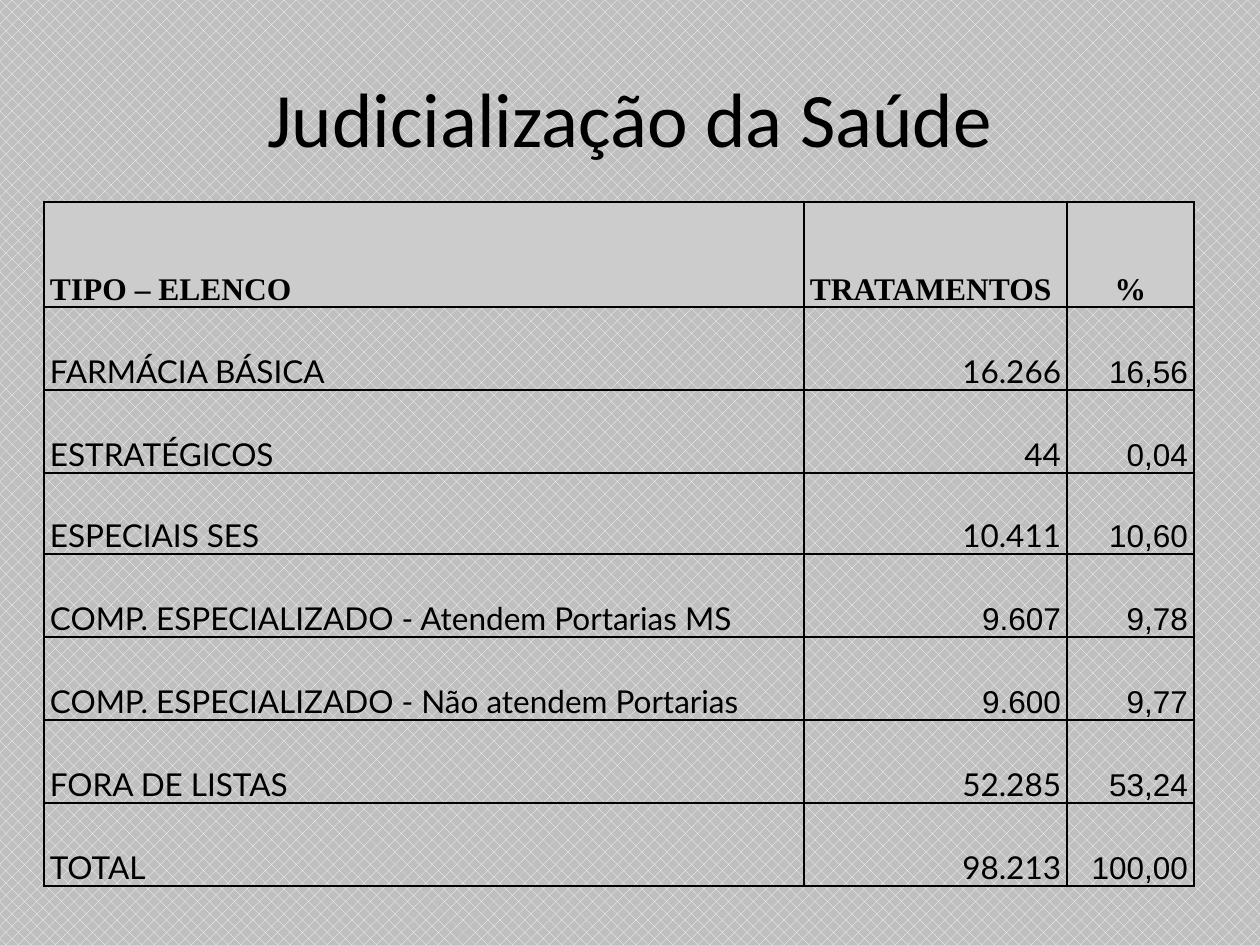
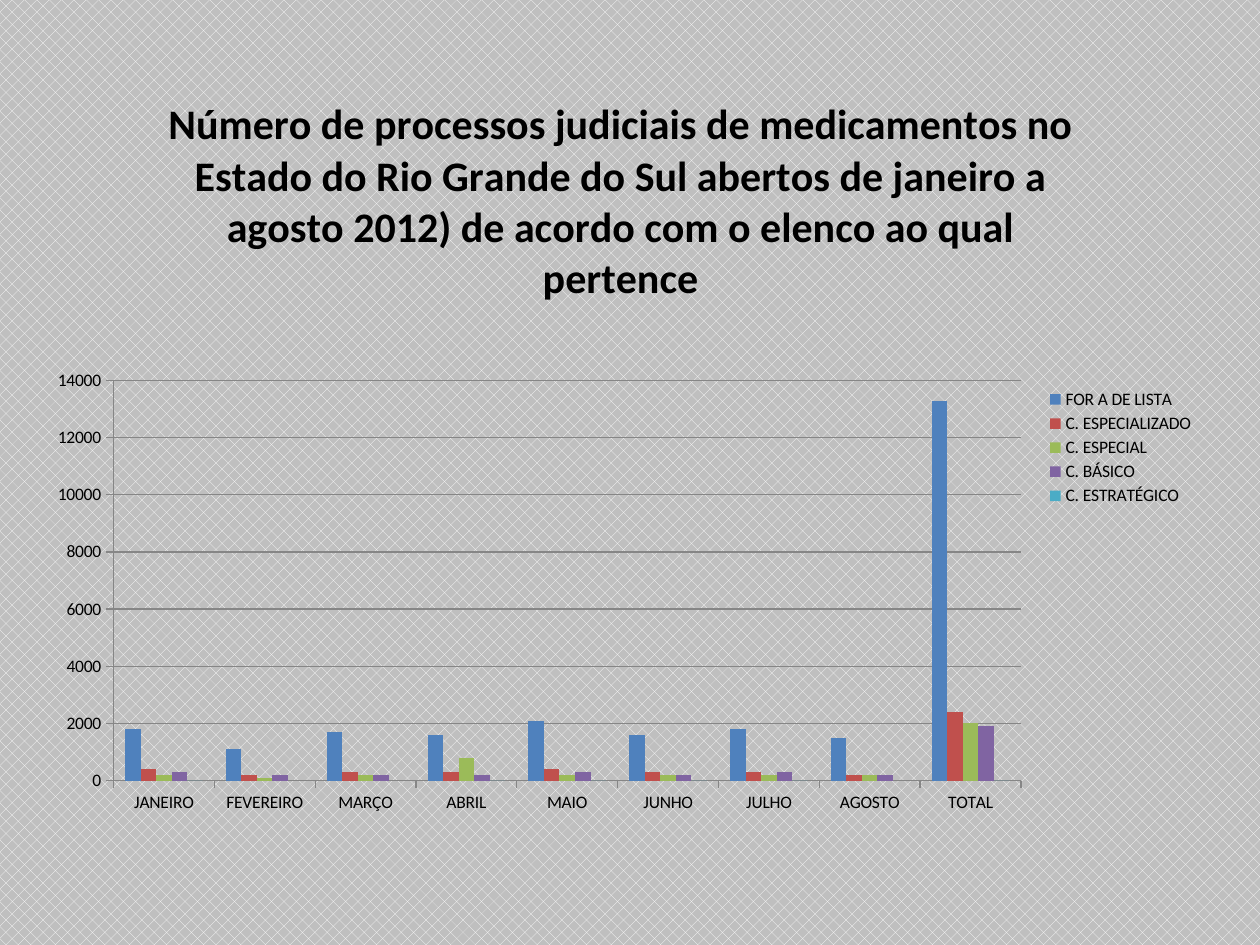
"""Two slides on court-ordered medicine supply: a summary table and a monthly chart."""
import lxml.etree
import pptx
import pptx.chart.data
import pptx.dml.color
import pptx.enum.chart
import pptx.enum.dml
import pptx.enum.text
import pptx.oxml
import pptx.oxml.ns
import pptx.util

PX = 914400 / 126
BLACK = pptx.dml.color.RGBColor(0x00, 0x00, 0x00)
WHITE = pptx.dml.color.RGBColor(0xFF, 0xFF, 0xFF)
PAGE_GREY = pptx.dml.color.RGBColor(0xBF, 0xBF, 0xBF)
HEADER_GREY = pptx.dml.color.RGBColor(0xCC, 0xCC, 0xCC)
AXIS_GREY = pptx.dml.color.RGBColor(0x86, 0x86, 0x86)
BLUE = pptx.dml.color.RGBColor(0x4F, 0x81, 0xBD)
RED = pptx.dml.color.RGBColor(0xC0, 0x50, 0x4D)
GREEN = pptx.dml.color.RGBColor(0x9B, 0xBB, 0x59)
PURPLE = pptx.dml.color.RGBColor(0x80, 0x64, 0xA2)
TEAL = pptx.dml.color.RGBColor(0x4B, 0xAC, 0xC6)
BODY_FONT, HEADER_FONT, TABLE_FONT, NUMBER_FONT = "Calibri", "Times New Roman", "Lato", "Arial"
LEFT = pptx.enum.text.PP_ALIGN.LEFT
CENTER = pptx.enum.text.PP_ALIGN.CENTER
RIGHT = pptx.enum.text.PP_ALIGN.RIGHT

COLUMN_WIDTHS = [760, 263, 127, 32]
ROW_HEIGHTS = [58, 105, 83, 83, 81, 83, 83, 83, 83]
TABLE_HEADER = ("TIPO – ELENCO", "TRATAMENTOS", "%")
TREATMENTS = [
    ("FARMÁCIA BÁSICA", "16.266", "16,56"),
    ("ESTRATÉGICOS", "44", "0,04"),
    ("ESPECIAIS SES", "10.411", "10,60"),
    ("COMP. ESPECIALIZADO - Atendem Portarias MS", "9.607", "9,78"),
    ("COMP. ESPECIALIZADO - Não atendem Portarias", "9.600", "9,77"),
    ("FORA DE LISTAS", "52.285", "53,24"),
    ("TOTAL", "98.213", "100,00"),
]
CHART_TITLE = (
    "Número de processos judiciais de medicamentos no Estado do Rio Grande do Sul "
    "abertos de janeiro a agosto 2012) de acordo com o elenco ao qual pertence"
)
PERIODS = ["JANEIRO", "FEVEREIRO", "MARÇO", "ABRIL", "MAIO", "JUNHO", "JULHO", "AGOSTO", "TOTAL"]
LAWSUITS = [
    ("FOR A DE LISTA", BLUE, [1800, 1100, 1700, 1600, 2100, 1600, 1800, 1500, 13300]),
    ("C. ESPECIALIZADO", RED, [400, 200, 300, 300, 400, 300, 300, 200, 2400]),
    ("C. ESPECIAL", GREEN, [200, 100, 200, 800, 200, 200, 200, 200, 2000]),
    ("C. BÁSICO", PURPLE, [300, 200, 200, 200, 300, 200, 300, 200, 1900]),
    ("C. ESTRATÉGICO", TEAL, [0, None, None, 0, 0, 0, 0, None, 0]),
]


def px(length):
    """Turn a pixel length into EMU."""
    return pptx.util.Emu(round(length * PX))


def add_span(para, text, font, size, bold=False):
    """Add one run of black text to a paragraph."""
    span = para.add_run()
    span.text = text
    span.font.name = font
    span.font.size = pptx.util.Pt(size)
    span.font.bold = bold
    span.font.color.rgb = BLACK


def set_page_background(deck):
    """Give every slide the light dotted grey background."""
    fill = deck.slide_master.background.fill
    fill.patterned()
    fill.pattern = pptx.enum.dml.MSO_PATTERN.PERCENT_30
    fill.fore_color.rgb = WHITE
    fill.back_color.rgb = PAGE_GREY


def place_title(page, text, box):
    """Move the title placeholder to its box and write the title."""
    title = page.shapes.title
    title.left, title.top, title.width, title.height = map(px, box)
    frame = title.text_frame
    frame.word_wrap = True
    frame.vertical_anchor = pptx.enum.text.MSO_ANCHOR.MIDDLE
    para = frame.paragraphs[0]
    para.alignment = CENTER
    add_span(para, text, BODY_FONT, 44)


def in_grid(row, column):
    """Tell whether a cell belongs to the ruled part of the table."""
    return 1 <= row < len(ROW_HEIGHTS) and 0 <= column < len(TABLE_HEADER)


def rule_cell(cell, row, column):
    """Draw a black border on each side that touches the ruled part."""
    neighbours = {
        "lnL": (row, column - 1),
        "lnR": (row, column + 1),
        "lnT": (row - 1, column),
        "lnB": (row + 1, column),
    }
    properties = cell._tc.get_or_add_tcPr()
    for side, neighbour in neighbours.items():
        line = lxml.etree.SubElement(properties, pptx.oxml.ns.qn("a:" + side), w="12700")
        if in_grid(row, column) or in_grid(*neighbour):
            fill = lxml.etree.SubElement(line, pptx.oxml.ns.qn("a:solidFill"))
            lxml.etree.SubElement(fill, pptx.oxml.ns.qn("a:srgbClr"), val=str(BLACK))
        else:
            lxml.etree.SubElement(line, pptx.oxml.ns.qn("a:noFill"))


def write_cell(cell, text, font, alignment, bold):
    """Write one bottom-anchored table entry."""
    cell.vertical_anchor = pptx.enum.text.MSO_ANCHOR.BOTTOM
    cell.margin_left = cell.margin_right = px(6)
    cell.margin_top = cell.margin_bottom = 0
    para = cell.text_frame.paragraphs[0]
    para.alignment = alignment
    para.line_spacing = 1.15
    add_span(para, text, font, 18, bold)


def entry_font(label, column):
    """Choose the font of a body entry."""
    is_number = column == 2 or (column == 1 and label.startswith("COMP."))
    return NUMBER_FONT if is_number else TABLE_FONT


def add_treatment_table(page, box):
    """Add the table of treatments by type of list."""
    table = page.shapes.add_table(len(ROW_HEIGHTS), len(COLUMN_WIDTHS), *map(px, box)).table
    table.first_row = table.horz_banding = False
    for column, width in zip(table.columns, COLUMN_WIDTHS):
        column.width = px(width)
    for row, height in zip(table.rows, ROW_HEIGHTS):
        row.height = px(height)
    for row in range(len(ROW_HEIGHTS)):
        for column in range(len(COLUMN_WIDTHS)):
            cell = table.cell(row, column)
            rule_cell(cell, row, column)
            cell.fill.background()
    for column, (text, alignment) in enumerate(zip(TABLE_HEADER, (LEFT, LEFT, CENTER))):
        cell = table.cell(1, column)
        cell.fill.solid()
        cell.fill.fore_color.rgb = HEADER_GREY
        write_cell(cell, text, HEADER_FONT, alignment, True)
    for row, entries in enumerate(TREATMENTS, start=2):
        for column, (text, alignment) in enumerate(zip(entries, (LEFT, RIGHT, RIGHT))):
            write_cell(table.cell(row, column), text, entry_font(entries[0], column), alignment, False)


def set_layout(parent, part, chart_box, inner=False):
    """Fix the place of a chart part, given in px within the chart box."""
    part_layout = parent.find(pptx.oxml.ns.qn("c:layout"))
    if part_layout is None:
        part_layout = pptx.oxml.parse_xml(f'<c:layout {pptx.oxml.ns.nsdecls("c")}/>')
        position = 1 if parent.find(pptx.oxml.ns.qn("c:legendPos")) is not None else 0
        parent.insert(position, part_layout)
    for child in list(part_layout):
        part_layout.remove(child)
    manual = lxml.etree.SubElement(part_layout, pptx.oxml.ns.qn("c:manualLayout"))
    width, height = chart_box[2:]
    settings = [("layoutTarget", "inner")] if inner else []
    settings += [("xMode", "edge"), ("yMode", "edge")]
    settings += [
        (name, f"{length / whole:.3f}")
        for name, length, whole in zip("xywh", part, (width, height, width, height))
    ]
    for name, value in settings:
        lxml.etree.SubElement(manual, pptx.oxml.ns.qn("c:" + name), val=value)


def add_lawsuit_chart(page, box):
    """Add the clustered columns of lawsuits by month."""
    data = pptx.chart.data.CategoryChartData()
    data.categories = PERIODS
    for name, _, values in LAWSUITS:
        data.add_series(name, values)
    kind = pptx.enum.chart.XL_CHART_TYPE.COLUMN_CLUSTERED
    chart = page.shapes.add_chart(kind, *map(px, box), data).chart
    chart.font.name = BODY_FONT
    chart.font.size = pptx.util.Pt(10)
    chart.font.color.rgb = BLACK

    chart.has_title = True
    chart.chart_title.include_in_layout = False
    add_span(chart.chart_title.text_frame.paragraphs[0], CHART_TITLE, BODY_FONT, 24, True)

    chart.has_legend = True
    chart.legend.position = pptx.enum.chart.XL_LEGEND_POSITION.RIGHT
    chart.legend.include_in_layout = False

    plot = chart.plots[0]
    plot.gap_width = 150
    plot.vary_by_categories = False
    for series, (_, color, _) in zip(plot.series, LAWSUITS):
        series.format.fill.solid()
        series.format.fill.fore_color.rgb = color

    chart.value_axis.maximum_scale = 14000
    chart.value_axis.minimum_scale = 0
    chart.value_axis.major_unit = 2000
    chart.value_axis.has_major_gridlines = True
    for axis in (chart.category_axis, chart.value_axis):
        axis.major_tick_mark = pptx.enum.chart.XL_TICK_MARK.OUTSIDE
        axis.format.line.color.rgb = AXIS_GREY
    chart.value_axis.major_gridlines.format.line.color.rgb = AXIS_GREY

    plot_area = chart._chartSpace.chart.plotArea
    set_layout(plot_area, (78, 315, 907, 400), box, inner=True)
    set_layout(chart.legend._element, (1008, 319, 155, 125), box)


def build_table_page(deck):
    """Build the slide with the title and the treatment table."""
    page = deck.slides.add_slide(deck.slide_layouts.get_by_name("Title Only"))
    place_title(page, "Judicialização da Saúde", (63, 38, 1134, 158))
    add_treatment_table(page, (44, 144, sum(COLUMN_WIDTHS), sum(ROW_HEIGHTS)))


def build_chart_page(deck):
    """Build the slide that holds only the lawsuit chart."""
    page = deck.slides.add_slide(deck.slide_layouts.get_by_name("Blank"))
    add_lawsuit_chart(page, (35, 66, 1171, 762))


def main():
    """Build and save the deck."""
    deck = pptx.Presentation()
    deck.slide_width, deck.slide_height = px(1260), px(945)
    set_page_background(deck)
    build_table_page(deck)
    build_chart_page(deck)
    deck.save("out.pptx")


if __name__ == "__main__":
    main()
